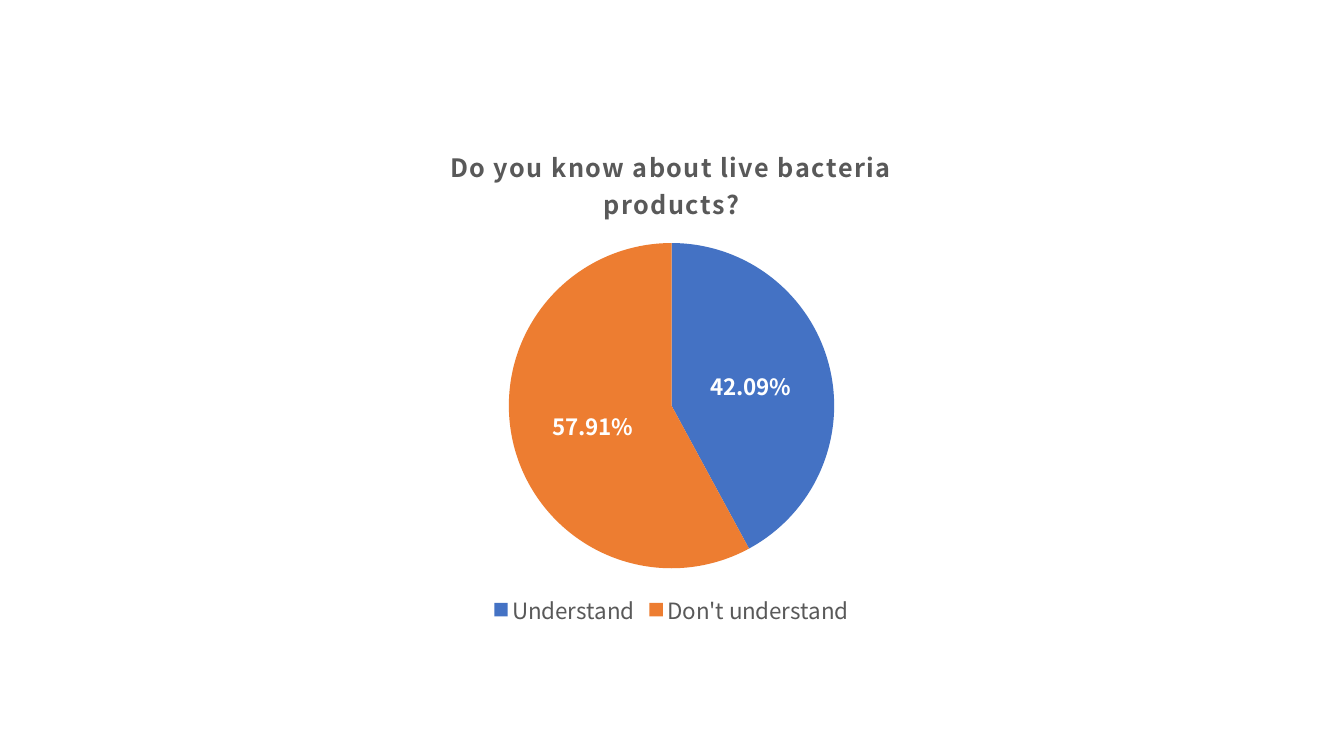
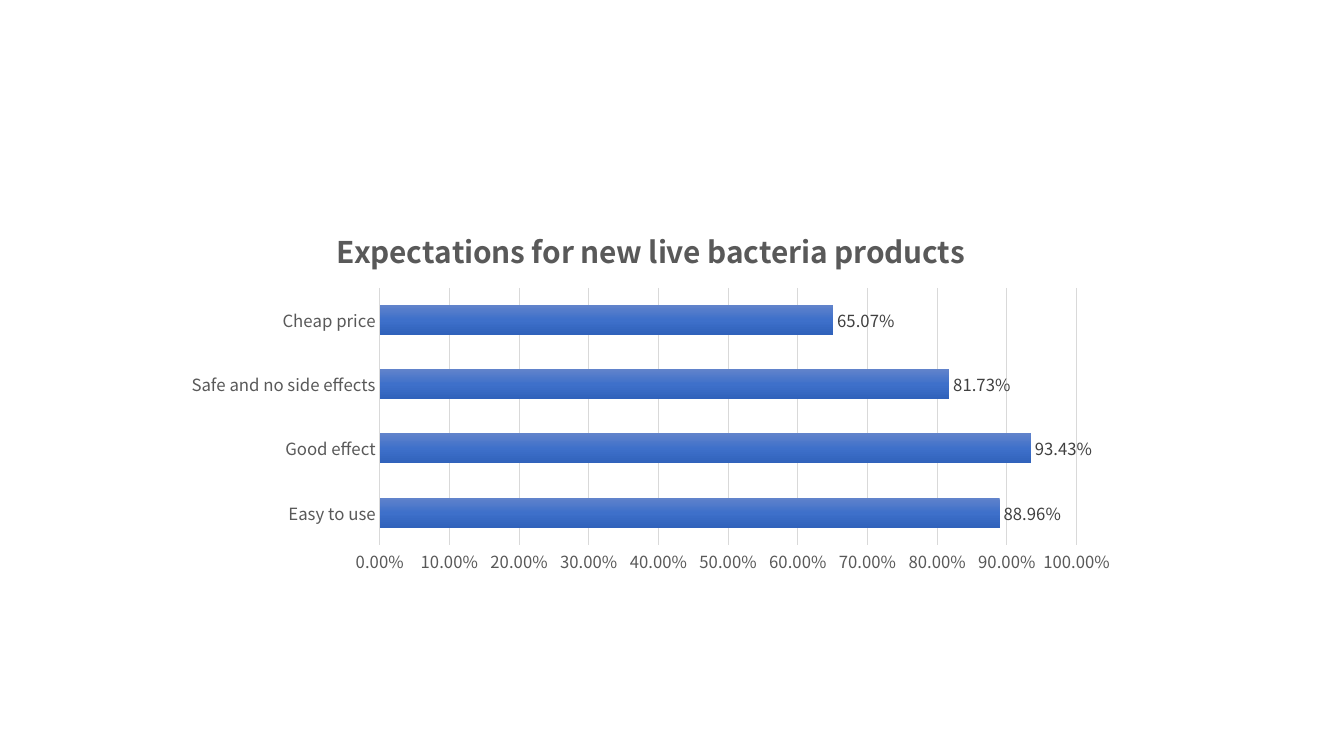
"""Build two survey slides: a pie chart and a bar chart."""
from dataclasses import dataclass

from lxml import etree
from pptx import Presentation
from pptx.chart import chart as ch, data as cd
from pptx.dml import color as col
from pptx.enum import chart as ec
from pptx.oxml import ns
from pptx.util import Inches, Pt

FONT = "Noto Sans CJK SC"
HEX = {
    "blue": "4472C4", "orange": "ED7D31", "white": "FFFFFF",
    "text": "595959", "label": "404040", "grid": "D9D9D9",
    "top": "6183CB", "mid": "3E70CA", "base": "3062BB",
}


@dataclass(frozen=True)
class Plot:
    kind: ec.XL_CHART_TYPE
    box: tuple[float, float, float, float]
    title: str
    size: float
    track: int
    data: dict[str, float]


PIE = Plot(
    ec.XL_CHART_TYPE.PIE, (3.79, 1.24, 5.74, 5.01),
    "Do you know about live bacteria products?", 18, 100,
    {"Understand": 0.4209, "Don't understand": 0.5791},
)
BAR = Plot(
    ec.XL_CHART_TYPE.BAR_CLUSTERED, (1.71, 2.06, 9.49, 3.71),
    "Expectations for new live bacteria products", 21.3, 0,
    {"Easy to use": 0.8896, "Good effect": 0.9343,
     "Safe and no side effects": 0.8173, "Cheap price": 0.6507},
)


def rgb(name: str) -> col.RGBColor:
    return col.RGBColor.from_string(HEX[name])


def style(font, size: float, color: str = "text", bold: bool = False) -> None:
    font.name, font.size, font.bold = FONT, Pt(size), bold
    font.color.rgb = rgb(color)


def head(chart: ch.Chart, words: str, *, size: float, track: int = 0) -> None:
    chart.has_title = True
    chart.chart_title.include_in_layout = False
    run = chart.chart_title.text_frame.paragraphs[0].add_run()
    run.text = words
    style(run.font, size, bold=True)
    if track:
        run.font._element.set("spc", str(track))


def label(plot, place, size: float, color: str, bold: bool = False) -> None:
    plot.has_data_labels = True
    tags = plot.data_labels
    tags.show_value = True
    tags.show_percentage = False
    tags.number_format, tags.number_format_is_linked = "0.00%", False
    tags.position = place
    style(tags.font, size, color, bold)


def shade(form, names: list[str]) -> None:
    form.fill.gradient()
    grad = form._element.spPr.find(ns.qn("a:gradFill"))
    for node in list(grad):
        grad.remove(node)
    stops = etree.SubElement(grad, ns.qn("a:gsLst"))
    step = 100000 // (len(names) - 1)
    for i, name in enumerate(names):
        stop = etree.SubElement(stops, ns.qn("a:gs"), pos=str(i * step))
        etree.SubElement(stop, ns.qn("a:srgbClr"), val=HEX[name])
    etree.SubElement(grad, ns.qn("a:lin"), ang="5400000", scaled="0")


def draw(deck, plot: Plot) -> ch.Chart:
    slide = deck.slides.add_slide(deck.slide_layouts[6])
    data = cd.CategoryChartData(number_format="0.00%")
    data.categories = list(plot.data)
    data.add_series("Series 1", list(plot.data.values()))
    box = map(Inches, plot.box)
    chart = slide.shapes.add_chart(plot.kind, *box, data).chart
    chart.font.name, chart.font.size = FONT, Pt(10)
    head(chart, plot.title, size=plot.size, track=plot.track)
    chart.has_legend = False
    return chart


def pie(deck) -> None:
    chart = draw(deck, PIE)
    plot = chart.plots[0]
    plot.vary_by_categories = True
    for i, name in enumerate(("blue", "orange")):
        fill = plot.series[0].points[i].format.fill
        fill.solid()
        fill.fore_color.rgb = rgb(name)
    label(plot, ec.XL_LABEL_POSITION.CENTER, 16, "white", True)
    chart.has_legend = True
    chart.legend.position = ec.XL_LEGEND_POSITION.BOTTOM
    chart.legend.include_in_layout = False
    style(chart.legend.font, 16)


def bar(deck) -> None:
    chart = draw(deck, BAR)
    plot = chart.plots[0]
    plot.vary_by_categories = False
    plot.gap_width, plot.overlap = 115, -20
    shade(plot.series[0].format, ["top", "mid", "base"])
    label(plot, ec.XL_LABEL_POSITION.OUTSIDE_END, 11.9, "label")
    cat, val = chart.category_axis, chart.value_axis
    for axis, size in ((cat, 12), (val, 11.9)):
        axis.major_tick_mark = axis.minor_tick_mark = ec.XL_TICK_MARK.NONE
        style(axis.tick_labels.font, size)
    cat.format.line.color.rgb = rgb("grid")
    cat.format.line.width = Pt(1)
    val.format.line.fill.background()
    val.minimum_scale, val.maximum_scale, val.major_unit = 0, 1, 0.1
    val.tick_labels.number_format = "0.00%"
    val.tick_labels.number_format_is_linked = False
    val.has_major_gridlines = True
    val.major_gridlines.format.line.color.rgb = rgb("grid")
    val.major_gridlines.format.line.width = Pt(0.75)


def main() -> None:
    deck = Presentation()
    deck.slide_width, deck.slide_height = Inches(13.33), Inches(7.5)
    pie(deck)
    bar(deck)
    deck.save("out.pptx")


if __name__ == "__main__":
    main()
